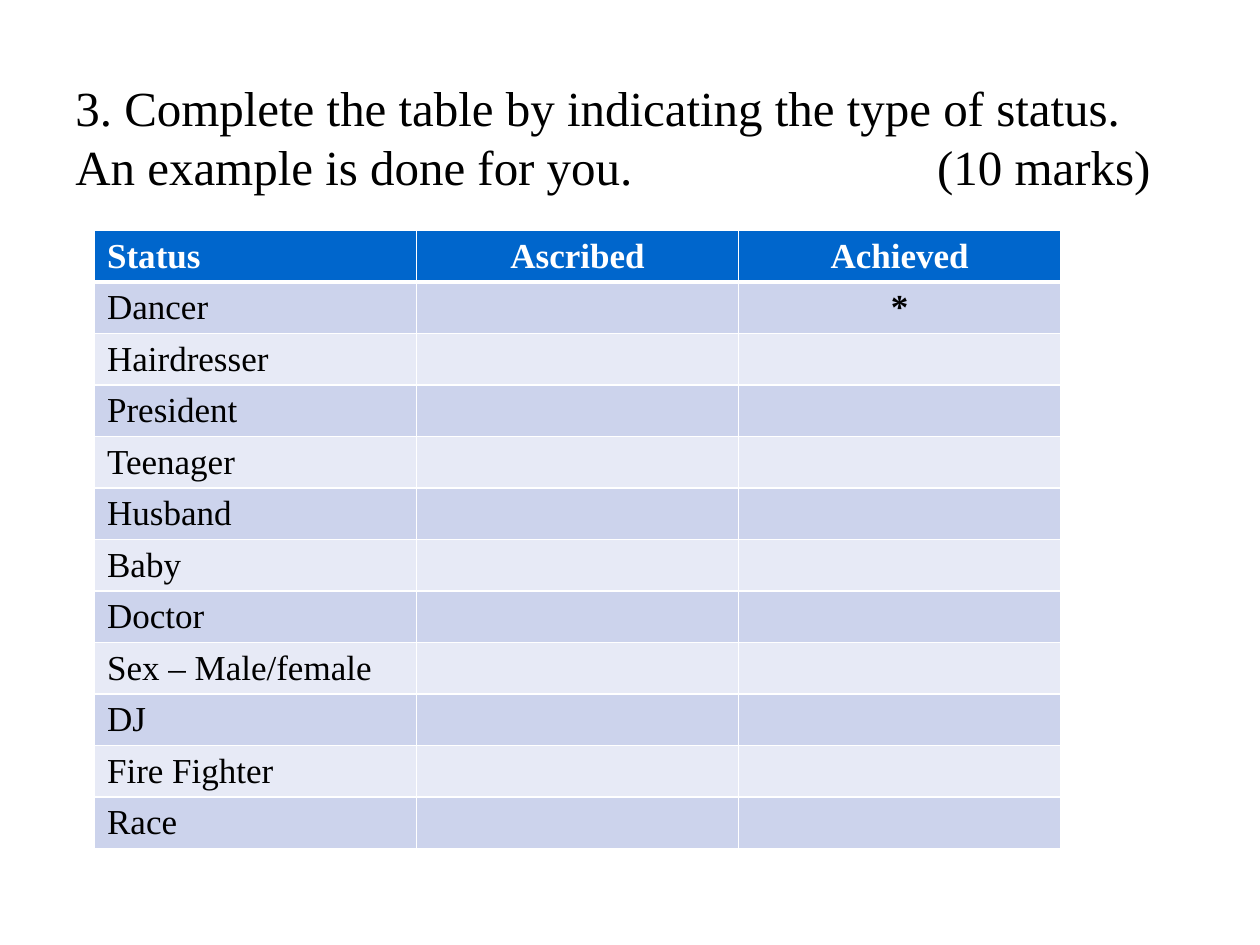
from pptx import Presentation
from pptx import util as u
from pptx.dml.color import RGBColor
from pptx.enum import text as t
from pptx.oxml import parse_xml
from pptx.oxml.ns import nsdecls

HUES = {"ink": "000000", "paper": "FFFFFF", "head": "0066CC",
        "odd": "CCD3EC", "even": "E7EAF6"}
FACE = "Times New Roman"
ROLES = ["Dancer", "Hairdresser", "President", "Teenager", "Husband", "Baby",
         "Doctor", "Sex – Male/female", "DJ", "Fire Fighter", "Race"]
ROWS = [["Status", "Ascribed", "Achieved"]] + [
    [role, "", "*" if role == "Dancer" else ""] for role in ROLES]


def style(font, hue, **form):
    """Set the face, colour and other format values of a font."""
    for key, val in {"name": FACE, **form}.items():
        setattr(font, key, val)
    font.color.rgb = RGBColor.from_string(HUES[hue])


def title(slide, box):
    """Place the question, with its marks at a tab stop."""
    frame = slide.shapes.add_textbox(*box).text_frame
    form = {"word_wrap": True, "auto_size": t.MSO_AUTO_SIZE.NONE,
            "vertical_anchor": t.MSO_ANCHOR.MIDDLE}
    for key, val in form.items():
        setattr(frame, key, val)
    para = frame.paragraphs[0]
    stop = int(box[2] * 0.76)
    para._p.get_or_add_pPr().append(parse_xml(
        f'<a:tabLst {nsdecls("a")}><a:tab pos="{stop}" algn="l"/></a:tabLst>'))
    run = para.add_run()
    run.text = ("3. Complete the table by indicating the type of status. "
                "An example is done for you.\t(10 marks)")
    style(run.font, "ink", size=u.Pt(28))


def rule(cell, row):
    """Draw the cell borders, thicker below the head row."""
    thick = {"T": row == 1, "B": row == 0}
    for side in "LRTB":
        wide = u.Pt(3 if thick.get(side) else 1)
        cell._tc.get_or_add_tcPr().append(parse_xml(
            f'<a:ln{side} {nsdecls("a")} w="{wide}"><a:solidFill>'
            f'<a:srgbClr val="{HUES["paper"]}"/></a:solidFill></a:ln{side}>'))


def fill(cell, row, col, word):
    """Give one cell its borders, colour and word."""
    rule(cell, row)
    hue = "head" if row == 0 else "odd" if row % 2 else "even"
    cell.fill.solid()
    cell.fill.fore_color.rgb = RGBColor.from_string(HUES[hue])
    para = cell.text_frame.paragraphs[0]
    if col:
        para.alignment = t.PP_ALIGN.CENTER
    if word:
        run = para.add_run()
        run.text = word
        style(run.font, "ink" if row else "paper", size=u.Pt(20),
              bold=row == 0 or col > 0)


def grid(slide, box):
    """Place the status table with equal columns and rows."""
    table = slide.shapes.add_table(len(ROWS), len(ROWS[0]), *box).table
    for row, words in enumerate(ROWS):
        for col, word in enumerate(words):
            fill(table.cell(row, col), row, col, word)


def main():
    """Build the slide and save it."""
    deck = Presentation()
    deck.slide_width, deck.slide_height = u.Inches(10), u.Inches(7.5)
    slide = deck.slides.add_slide(deck.slide_layouts[6])
    title(slide, [u.Inches(n) for n in (0.5, 0.58, 9, 1)])
    grid(slide, [u.Inches(n) for n in (0.75, 1.83, 7.67, 4.8)])
    deck.save("out.pptx")


if __name__ == "__main__":
    main()
